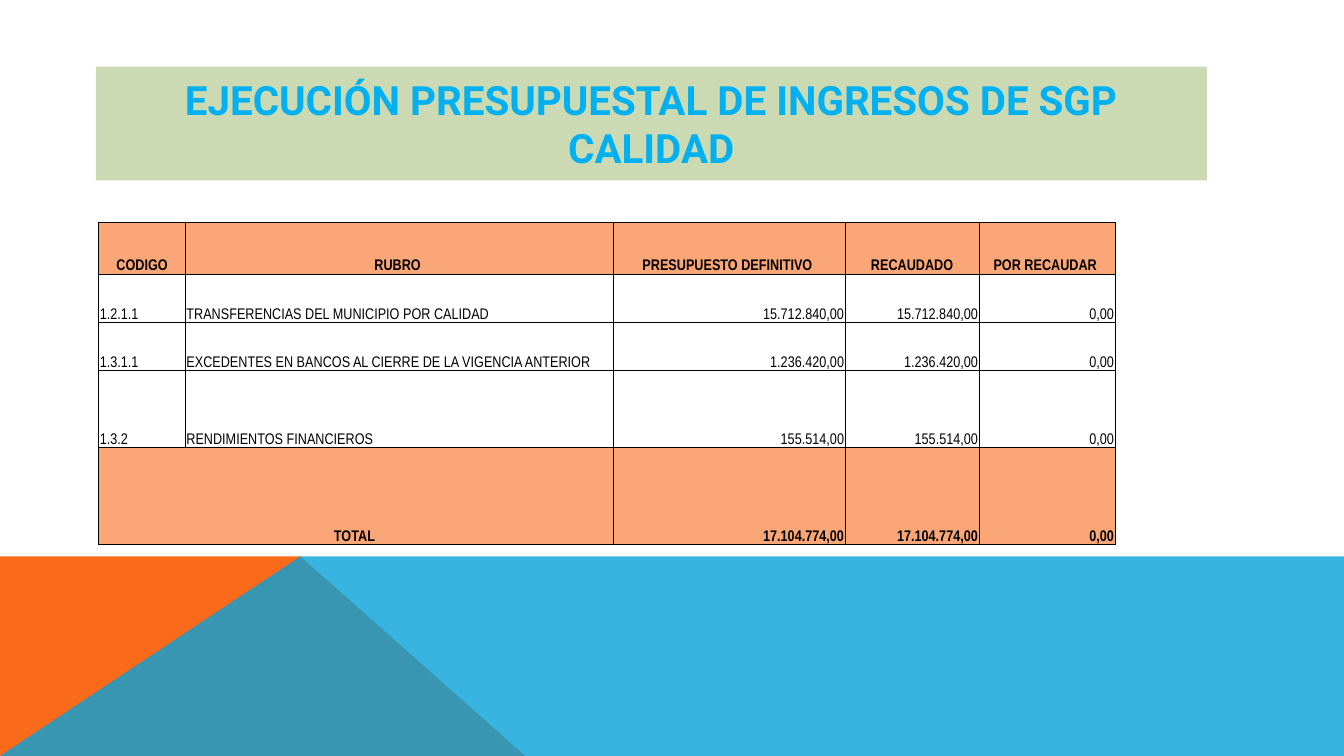
from dataclasses import dataclass

from lxml.etree import SubElement
from pptx import Presentation
from pptx.dml.color import RGBColor
from pptx.enum.text import MSO_ANCHOR, MSO_AUTO_SIZE, PP_ALIGN
from pptx.oxml.ns import qn
from pptx.util import Inches, Pt


@dataclass(frozen=True)
class Theme:
    orange: str = "F96A1B"
    blue: str = "08A1D9"
    title_fill: str = "CCDAB3"
    title_text: str = "00B0F0"
    table_fill: str = "FBA676"
    ink: str = "000000"
    title_font: str = "Roboto"
    table_font: str = "Arial Narrow"
    title_size: float = 28.8
    table_size: float = 11
    border_width: float = 0.5


THEME = Theme()
SLIDE_WIDTH, SLIDE_HEIGHT = 13.33, 7.5

COLUMN_WIDTHS = [0.86, 4.25, 2.3, 1.33, 1.35]
ROW_HEIGHTS = [0.51, 0.48, 0.48, 0.77, 0.96]
BUDGET_ROWS = [
    ["CODIGO", "RUBRO ", "PRESUPUESTO DEFINITIVO ", "RECAUDADO", "POR RECAUDAR "],
    ["1.2.1.1", "TRANSFERENCIAS DEL MUNICIPIO POR CALIDAD",
     "15.712.840,00", "15.712.840,00", "0,00"],
    ["1.3.1.1", "EXCEDENTES EN BANCOS AL CIERRE DE LA VIGENCIA ANTERIOR",
     "1.236.420,00", "1.236.420,00", "0,00"],
    ["1.3.2", "RENDIMIENTOS FINANCIEROS", "155.514,00", "155.514,00", "0,00"],
    ["TOTAL ", "", "17.104.774,00", "17.104.774,00", "0,00"],
]


def fill_solid(target, color):
    target.fill.solid()
    target.fill.fore_color.rgb = RGBColor.from_string(color)


def write_text(text_frame, text, *, font, size, color, bold=False, align=PP_ALIGN.LEFT):
    paragraph = text_frame.paragraphs[0]
    paragraph.alignment = align
    run = paragraph.add_run()
    run.text = text
    run.font.name = font
    run.font.size = Pt(size)
    run.font.bold = bold
    run.font.color.rgb = RGBColor.from_string(color)


def add_polygon(slide, points, color, opacity=100):
    corners = [(Inches(x), Inches(y)) for x, y in points]
    builder = slide.shapes.build_freeform(*corners[0], scale=1.0)
    builder.add_line_segments(corners[1:], close=True)
    shape = builder.convert_to_shape()
    shape.shadow.inherit = False
    fill_solid(shape, color)
    shape.line.fill.background()
    if opacity < 100:
        color_element = shape._element.spPr.find(qn("a:solidFill"))[0]
        SubElement(color_element, qn("a:alpha"), val=str(opacity * 1000))


def add_footer(slide, left, top, width, height):
    right, bottom = left + width, top + height
    peak = (left + 2.98, top)
    add_polygon(slide, [(left, bottom), (left, top), peak, (left + 5.21, bottom)],
                THEME.orange)
    add_polygon(slide, [(left, bottom), peak, (right, top), (right, bottom)],
                THEME.blue, opacity=80)


def add_title(slide, left, top, width, height):
    title = slide.shapes.title
    title.left, title.top = Inches(left), Inches(top)
    title.width, title.height = Inches(width), Inches(height)
    fill_solid(title, THEME.title_fill)
    text_frame = title.text_frame
    text_frame.word_wrap = True
    text_frame.auto_size = MSO_AUTO_SIZE.NONE
    text_frame.vertical_anchor = MSO_ANCHOR.MIDDLE
    write_text(text_frame, "EJECUCIÓN PRESUPUESTAL DE INGRESOS DE SGP CALIDAD",
               font=THEME.title_font, size=THEME.title_size, color=THEME.title_text,
               bold=True, align=PP_ALIGN.CENTER)


def add_borders(cell):
    properties = cell._tc.get_or_add_tcPr()
    for index, side in enumerate(("lnL", "lnR", "lnT", "lnB")):
        line = properties.makeelement(qn(f"a:{side}"), {"w": str(Pt(THEME.border_width))})
        SubElement(SubElement(line, qn("a:solidFill")), qn("a:srgbClr"), val=THEME.ink)
        properties.insert(index, line)


def format_cell(cell, text, *, highlighted, align):
    cell.margin_left = cell.margin_right = cell.margin_top = Inches(0.01)
    cell.margin_bottom = 0
    cell.vertical_anchor = MSO_ANCHOR.BOTTOM
    if highlighted:
        fill_solid(cell, THEME.table_fill)
    else:
        cell.fill.background()
    add_borders(cell)
    if text:
        write_text(cell.text_frame, text, font=THEME.table_font, size=THEME.table_size,
                   color=THEME.ink, bold=highlighted, align=align)


def add_budget_table(slide, left, top, width, height):
    last_row = len(BUDGET_ROWS) - 1
    frame = slide.shapes.add_table(len(BUDGET_ROWS), len(COLUMN_WIDTHS), Inches(left),
                                   Inches(top), Inches(width), Inches(height))
    table = frame.table
    table.first_row = table.horz_banding = False
    for column, share in zip(table.columns, COLUMN_WIDTHS):
        column.width = Inches(width * share / sum(COLUMN_WIDTHS))
    for row, share in zip(table.rows, ROW_HEIGHTS):
        row.height = Inches(height * share / sum(ROW_HEIGHTS))
    table.cell(last_row, 0).merge(table.cell(last_row, 1))
    for row_index, texts in enumerate(BUDGET_ROWS):
        highlighted = row_index in (0, last_row)
        for column_index, text in enumerate(texts):
            if row_index == 0 or (highlighted and column_index < 2):
                align = PP_ALIGN.CENTER
            else:
                align = PP_ALIGN.LEFT if column_index < 2 else PP_ALIGN.RIGHT
            format_cell(table.cell(row_index, column_index), text,
                        highlighted=highlighted, align=align)


def main():
    presentation = Presentation()
    presentation.slide_width = Inches(SLIDE_WIDTH)
    presentation.slide_height = Inches(SLIDE_HEIGHT)
    slide = presentation.slides.add_slide(presentation.slide_layouts[5])
    add_footer(slide, 0, 5.52, SLIDE_WIDTH, 1.98)
    add_title(slide, 0.95, 0.66, 11.02, 1.13)
    add_budget_table(slide, 0.98, 2.21, 10.08, 3.19)
    presentation.save("out.pptx")


if __name__ == "__main__":
    main()
